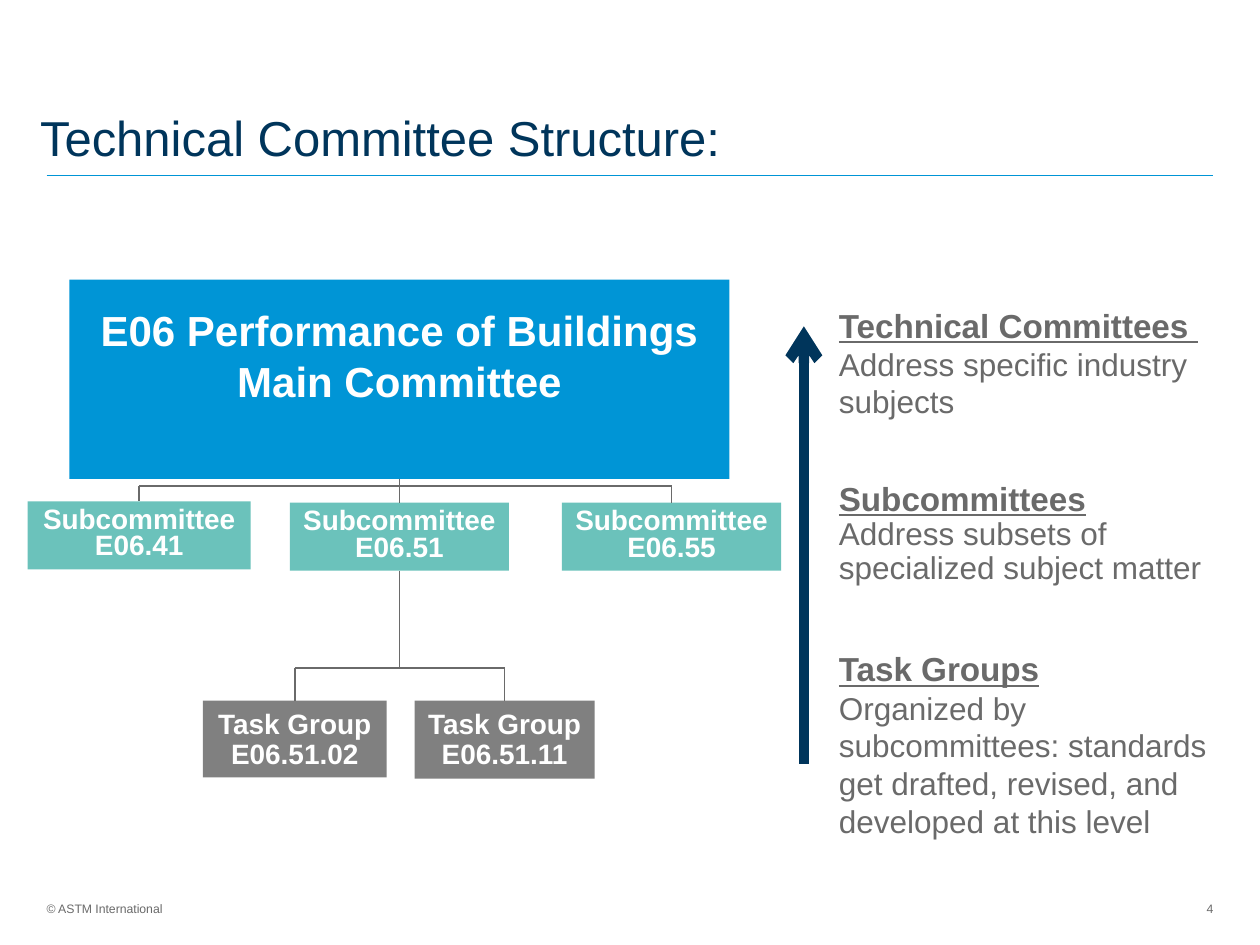
import pptx
import pptx.util
import pptx.dml.color
import pptx.enum.shapes
import pptx.enum.text
import pptx.oxml
import pptx.oxml.ns

Pt = pptx.util.Pt
ALIGN = pptx.enum.text.PP_ALIGN
ANCHOR = pptx.enum.text.MSO_ANCHOR
HUES = {"navy": "00355B", "blue": "0095D6", "teal": "6BC2BB",
        "gray": "808080", "ink": "6A6A6A", "white": "FFFFFF"}
COLS, ROWS = 100, 75

deck = pptx.Presentation()
deck.slide_width = pptx.util.Inches(10)
deck.slide_height = pptx.util.Inches(7.5)
slide = deck.slides.add_slide(deck.slide_layouts[6])
shapes = slide.shapes


def col(n):
    return round(deck.slide_width * n / COLS)


def row(n):
    return round(deck.slide_height * n / ROWS)


def place(x, y, w, h):
    return col(x), row(y), col(w), row(h)


def hue(name):
    return pptx.dml.color.RGBColor.from_string(HUES[name])


def write(shape, lines, tint, align=ALIGN.LEFT, anchor=ANCHOR.TOP, pad=True):
    frame = shape.text_frame
    frame.word_wrap = True
    frame.vertical_anchor = anchor
    if not pad:
        frame.margin_left = frame.margin_right = 0
        frame.margin_top = frame.margin_bottom = 0
    for i, (text, size, bold, under, space) in enumerate(lines):
        para = frame.add_paragraph() if i else frame.paragraphs[0]
        para.text = text
        para.alignment = align
        para.line_spacing = space
        font = para.font
        font.name, font.size = "Arial", Pt(size)
        font.bold, font.underline = bold, under
        font.color.rgb = hue(tint)
    return frame


def label(box, lines, tint="ink", **style):
    return write(shapes.add_textbox(*place(*box)), lines, tint, **style)


def block(box, fill, lines):
    shape = shapes.add_shape(pptx.enum.shapes.MSO_SHAPE.RECTANGLE, *place(*box))
    shape.shadow.inherit = False
    shape.fill.solid()
    shape.fill.fore_color.rgb = hue(fill)
    shape.line.fill.background()
    write(shape, lines, "white", align=ALIGN.CENTER)
    return shape


def line(x1, y1, x2, y2, tint="ink", width=1):
    wire = shapes.add_connector(pptx.enum.shapes.MSO_CONNECTOR.STRAIGHT,
                                col(x1), row(y1), col(x2), row(y2))
    wire.line.color.rgb = hue(tint)
    wire.line.width = Pt(width)
    props = wire._element.spPr
    props.append(pptx.oxml.parse_xml(
        "<a:effectLst %s/>" % pptx.oxml.ns.nsdecls("a")))
    return wire


def head(box):
    x, y, w, h = box
    label((x - 1.5, y, w + 1.5, h),
          [("Technical Committee Structure:", 28, False, False, Pt(30))],
          "navy", anchor=ANCHOR.MIDDLE)
    line(x, y + 6.4, x + w, y + 6.4, "blue", 0.5)


def tier(names, boxes, fill, spaces):
    return [block(box, fill, [(text, 16, True, False, space)
                              for text, space in zip(name, spaces)])
            for name, box in zip(names, boxes)]


def branch(kids, boxes, bus):
    mids = [x + w / 2 for x, y, w, h in boxes]
    line(mids[0], bus, mids[-1], bus)
    for kid, mid, box in zip(kids, mids, boxes):
        line(mid, bus, mid, box[1]).end_connect(kid, 0)


def tree(box):
    x, y, w, h = box
    main = (x + 3.3, y, 52.4, 15.8)
    subs = [(x, y + 17.6, 17.7, 5.4), (x + 20.8, y + 17.7, 17.4, 5.4),
            (x + 42.4, y + 17.7, 17.4, 5.4)]
    tasks = [(x + 13.9, y + 33.4, 14.6, 6.1), (x + 30.7, y + 33.4, 14.3, 6.2)]
    top = block(main, "blue", [
        ("E06 Performance of Buildings", 24, True, False, 1),
        ("Main Committee", 24, True, False, 1)])
    top.text_frame.margin_top = row(2)
    mid = tier([("Subcommittee", "E06." + n) for n in ("41", "51", "55")],
               subs, "teal", (0.8, 0.8))
    low = tier([("Task Group", "E06.51." + n) for n in ("02", "11")],
               tasks, "gray", (1, 0.9))
    branch([mid[0], mid[2]], [subs[0], subs[2]], y + 16.4)
    trunk = line(x + 29.5, y + 15.8, x + 29.5, y + 17.7)
    trunk.begin_connect(top, 2)
    trunk.end_connect(mid[1], 0)
    stem = line(x + 29.5, y + 23.1, x + 29.5, y + 30.8)
    stem.begin_connect(mid[1], 2)
    branch(low, tasks, y + 30.8)


def notes(box):
    x, y, w, h = box
    parts = [
        (0, 10.3, 1, "Technical Committees ",
         "Address specific industry subjects"),
        (14.1, 9.3, 0.9, "Subcommittees",
         "Address subsets of specialized subject matter"),
        (27.3, 16.3, 1, "Task Groups",
         "Organized by subcommittees: standards get drafted, revised, "
         "and developed at this level"),
    ]
    for down, tall, space, name, text in parts:
        label((x, y + down, w, tall), [(name, 19, True, True, space),
                                       (text, 18, False, False, space)])


def arrow(box):
    x, y, w, h = box
    shaft = line(x + w / 2, y + h, x + w / 2, y, "navy", 6)
    tip = pptx.oxml.parse_xml(
        '<a:tailEnd %s type="arrow"/>' % pptx.oxml.ns.nsdecls("a"))
    shaft.line._get_or_add_ln().append(tip)


def foot(box):
    x, y, w, h = box
    label((x, y, 11.3, h), [("© ASTM International", 7, False, False, 1)],
          pad=False)
    label((x + w - 4.9, y, 4.9, h), [("4", 7, False, False, 1)],
          align=ALIGN.RIGHT, anchor=ANCHOR.MIDDLE, pad=False)


head((3.7, 7.5, 92.6, 7.3))
tree((2.2, 22.2, 59.8, 39.6))
notes((65.6, 23.7, 32.7, 43.6))
arrow((62.3, 25.9, 3, 34.7))
foot((3.7, 71.5, 92.6, 1.3))
deck.save("out.pptx")
